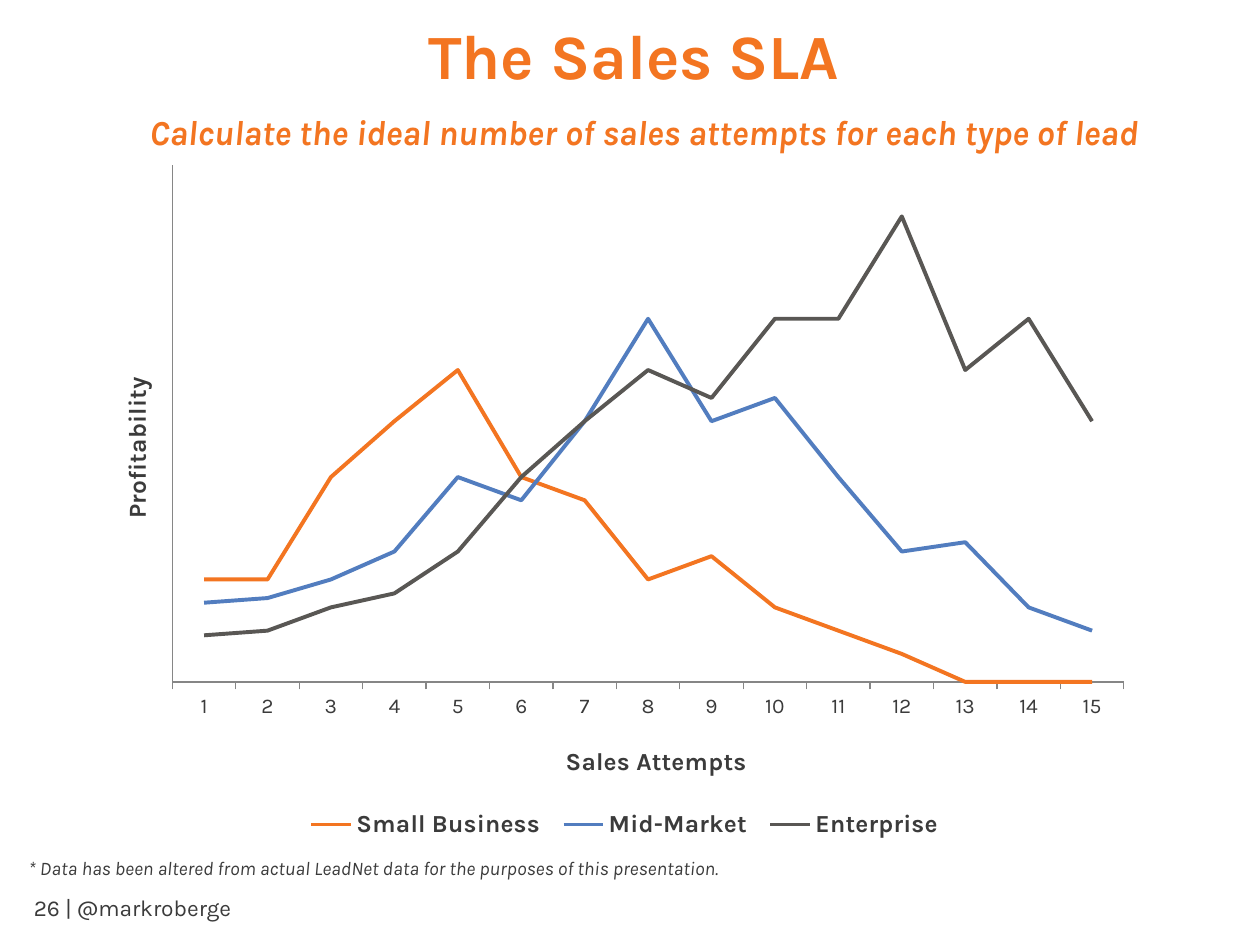
"""Build the sales SLA slide with a line chart of profitability by sales attempts."""
from dataclasses import dataclass

from lxml import etree
from pptx import Presentation
from pptx.chart.data import CategoryChartData
from pptx.dml.color import RGBColor
from pptx.enum.chart import XL_CHART_TYPE, XL_LEGEND_POSITION, XL_TICK_LABEL_POSITION, XL_TICK_MARK
from pptx.enum.shapes import MSO_SHAPE
from pptx.enum.text import MSO_ANCHOR, MSO_AUTO_SIZE, PP_ALIGN
from pptx.oxml.ns import qn
from pptx.util import Inches, Pt

LINE = XL_CHART_TYPE.LINE
BOTTOM = XL_LEGEND_POSITION.BOTTOM
NO_LABELS = XL_TICK_LABEL_POSITION.NONE
TICK_OUT, TICK_NONE = XL_TICK_MARK.OUTSIDE, XL_TICK_MARK.NONE
RECT = MSO_SHAPE.RECTANGLE
TOP, MIDDLE = MSO_ANCHOR.TOP, MSO_ANCHOR.MIDDLE
LEFT, CENTER = PP_ALIGN.LEFT, PP_ALIGN.CENTER
GROW = MSO_AUTO_SIZE.SHAPE_TO_FIT_TEXT
FONT = "Karla"
COLORS = {
    "orange": "F37521", "blue": "527DBF", "gray": "595754",
    "text": "3B3B3B", "axis": "868686", "white": "FFFFFF",
}


@dataclass
class Label:
    text: str
    box: tuple
    size: float
    color: str = "text"
    bold: bool = False
    italic: bool = False
    align: PP_ALIGN = LEFT
    anchor: MSO_ANCHOR = MIDDLE
    inset: tuple = (0.1, 0.05)


@dataclass
class Segment:
    name: str
    values: tuple
    color: str


TITLE = Label("The Sales SLA", (0.53, -0.19, 9, 1.25), 36, "orange", True,
              align=CENTER, inset=(0.08, 0.04))
SUBTITLE = Label("Calculate the ideal number of sales attempts for each type of lead ",
                 (0.27, 0.42, 9.75, 1.25), 20, "orange", True, True, CENTER, inset=(0.08, 0.04))
FOOTNOTE = Label("* Data has been altered from actual LeadNet data for the purposes of this presentation.",
                 (0.13, 6.75, 7, 0.29), 11, italic=True, anchor=TOP)
FOOTER = Label("26 | @markroberge", (0.17, 6.99, 2.33, 0.43), 13)
CHART_BOX = (0.67, 1.19, 8.41, 5.52)
SEGMENTS = (
    Segment("Small Business", (22, 22, 44, 56, 67, 44, 39, 22, 27, 16, 11, 6, 0, 0, 0), "orange"),
    Segment("Mid-Market", (17, 18, 22, 28, 44, 39, 56, 78, 56, 61, 44, 28, 30, 16, 11), "blue"),
    Segment("Enterprise", (10, 11, 16, 19, 28, 44, 56, 67, 61, 78, 78, 100, 67, 78, 56), "gray"),
)


def rgb(name: str) -> RGBColor:
    return RGBColor.from_string(COLORS[name])


def set_font(font, size: float, color: str = "text", bold: bool = False, italic: bool = False) -> None:
    font.name, font.size, font.bold, font.italic = FONT, Pt(size), bold, italic
    font.color.rgb = rgb(color)


def write(s, label: Label) -> None:
    s.left, s.top, s.width, s.height = map(Inches, label.box)
    tf = s.text_frame
    tf.word_wrap = True
    tf.vertical_anchor = label.anchor
    tf.margin_left = tf.margin_right = Inches(label.inset[0])
    tf.margin_top = tf.margin_bottom = Inches(label.inset[1])
    p = tf.paragraphs[0]
    p.alignment = label.align
    r = p.add_run()
    r.text = label.text
    set_font(r.font, label.size, label.color, label.bold, label.italic)


def place(element, index: int, inner: bool = False, **fractions: float) -> None:
    for old in element.findall(qn("c:layout")):
        element.remove(old)
    layout = etree.Element(qn("c:layout"))
    manual = etree.SubElement(layout, qn("c:manualLayout"))
    if inner:
        etree.SubElement(manual, qn("c:layoutTarget"), val="inner")
    for key in ("x", "y"):
        etree.SubElement(manual, qn(f"c:{key}Mode"), val="edge")
    for key, value in fractions.items():
        etree.SubElement(manual, qn(f"c:{key}"), val=str(value))
    element.insert(index, layout)


def style_axis(axis, title: str, tick: XL_TICK_MARK, x: float, y: float) -> None:
    axis.has_major_gridlines = False
    axis.major_tick_mark, axis.minor_tick_mark = tick, TICK_NONE
    axis.format.line.color.rgb = rgb("axis")
    axis.format.line.width = Pt(0.75)
    r = axis.axis_title.text_frame.paragraphs[0].add_run()
    r.text = title
    set_font(r.font, 14, bold=True)
    place(axis.axis_title._element, 1, x=x, y=y)


def add_line_chart(slide) -> None:
    data = CategoryChartData()
    data.categories = [str(n) for n in range(1, 16)]
    for segment in SEGMENTS:
        data.add_series(segment.name, segment.values)
    chart = slide.shapes.add_chart(LINE, *map(Inches, CHART_BOX), data).chart
    set_font(chart.font, 10)
    chart.has_title = False
    plot = chart.plots[0]
    plot.vary_by_categories = False
    for series, segment in zip(plot.series, SEGMENTS):
        series.smooth = False
        series.format.line.color.rgb = rgb(segment.color)
        series.format.line.width = Pt(2.25)

    style_axis(chart.category_axis, "Sales Attempts", TICK_OUT, 0.45, 0.85)
    set_font(chart.category_axis.tick_labels.font, 12)
    value_axis = chart.value_axis
    style_axis(value_axis, "Profitability", TICK_NONE, 0.03, 0.32)
    value_axis.axis_title.text_frame._txBody.bodyPr.set("rot", "-5400000")
    value_axis.tick_label_position = NO_LABELS
    value_axis.minimum_scale, value_axis.maximum_scale = 0, 111

    chart.has_legend = True
    legend = chart.legend
    legend.position, legend.include_in_layout = BOTTOM, False
    set_font(legend.font, 14, bold=True)
    place(legend._element, 1, x=0.2, y=0.94, w=0.62, h=0.06)
    plot_area = chart._chartSpace.find(f".//{qn('c:plotArea')}")
    place(plot_area, 0, inner=True, x=0.083, y=0.022, w=0.898, h=0.743)


def main() -> None:
    prs = Presentation()
    prs.slide_width, prs.slide_height = Inches(10), Inches(7.5)
    slide = prs.slides.add_slide(prs.slide_layouts[5])
    write(slide.shapes.add_textbox(0, 0, 0, 0), FOOTER)
    s = slide.shapes.add_shape(RECT, 0, 0, 0, 0)
    s.shadow.inherit = False
    s.fill.solid()
    s.fill.fore_color.rgb = rgb("white")
    s.line.fill.background()
    write(s, FOOTNOTE)
    s.text_frame.auto_size = GROW
    add_line_chart(slide)
    write(slide.shapes.title, TITLE)
    write(slide.shapes.add_textbox(0, 0, 0, 0), SUBTITLE)
    prs.save("out.pptx")


if __name__ == "__main__":
    main()
